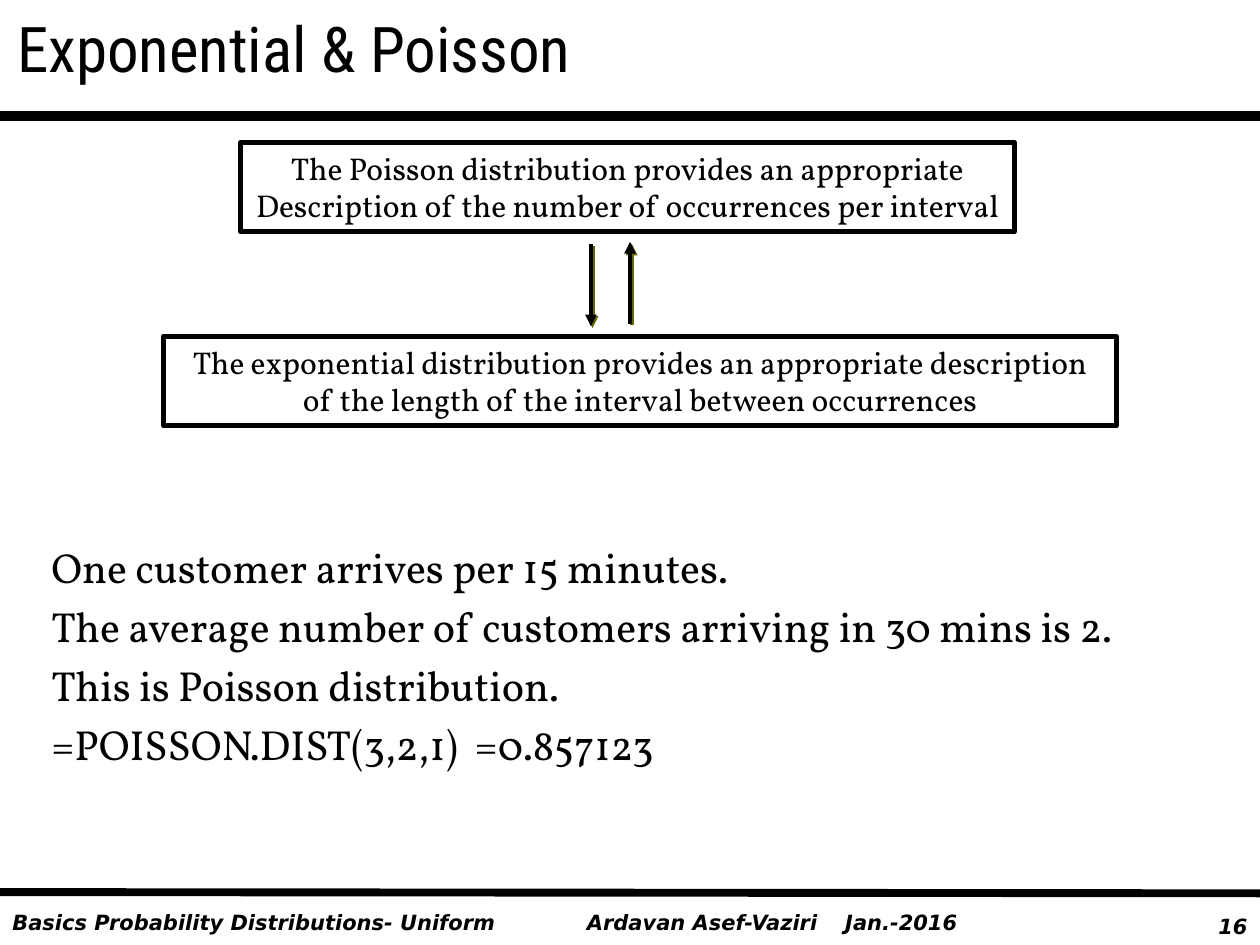
from lxml.etree import SubElement
from pptx import Presentation
from pptx.dml.color import RGBColor
from pptx.enum.shapes import MSO_CONNECTOR, MSO_SHAPE
from pptx.enum.text import MSO_ANCHOR, PP_ALIGN
from pptx.oxml.ns import qn
from pptx.util import Inches, Pt

COLORS = {"ink": "000000", "arrow_shadow": "666600"}
HEADING_FONT, BODY_FONT, FOOTER_FONT = "Roboto Condensed", "Vollkorn", "DejaVu Sans"

TITLE = "Exponential & Poisson"
EXAMPLE = [
    "One customer arrives per 15 minutes.",
    "The average number of customers arriving in 30 mins is 2.",
    "This is Poisson distribution.",
    "=POISSON.DIST(3,2,1)  =0.857123",
]
# Each box: left, top, width, height, paragraphs
DISTRIBUTIONS = [
    (1.91, 1.13, 6.14, 0.71, [
        "The Poisson distribution provides an appropriate",
        "Description of the number of occurrences per interval",
    ]),
    (1.3, 2.67, 7.56, 0.71, [
        "The exponential distribution provides an appropriate description "
        "of the length of the interval between occurrences",
    ]),
]
# Each footer: left, top, width, text, alignment
FOOTERS = [
    (0, 7.17, 4.67, "Basics Probability Distributions- Uniform", PP_ALIGN.LEFT),
    (4.56, 7.17, 3.35, "Ardavan Asef-Vaziri\tJan.-2016", PP_ALIGN.LEFT),
    (9.25, 7.2, 0.75, "16", PP_ALIGN.RIGHT),
]
DATE_TAB = 2.05
# Each rule: start height, end height, line width
RULES = [(0.92, 0.92, 6), (7.08, 7.09, 4.5)]
# Each arrow: x, start height, end height
ARROWS = [(4.69, 1.94, 2.59), (5, 2.57, 1.92)]


def color(name):
    return RGBColor.from_string(COLORS[name])


def write(shape, lines, font, size, align=PP_ALIGN.LEFT, bold_italic=False,
          space_before=0, anchor=MSO_ANCHOR.TOP):
    frame = shape.text_frame
    frame.text = "\n".join(lines)
    frame.word_wrap = True
    frame.vertical_anchor = anchor
    for paragraph in frame.paragraphs:
        paragraph.alignment = align
        paragraph.space_before = Pt(space_before)
        for run in paragraph.runs:
            run.font.name = font
            run.font.size = Pt(size)
            run.font.bold = run.font.italic = bold_italic
            run.font.color.rgb = color("ink")


def add_text(slide, left, top, width, height, lines, font, size, **style):
    box = slide.shapes.add_textbox(*map(Inches, (left, top, width, height)))
    write(box, lines, font, size, **style)
    return box


def add_tab_stop(paragraph, position):
    tabs = SubElement(paragraph._p.get_or_add_pPr(), qn("a:tabLst"))
    SubElement(tabs, qn("a:tab"), pos=str(Inches(position)), algn="l")


def add_line(slide, x1, y1, x2, y2, width):
    """Add a straight line and return it with its empty effect list."""
    line = slide.shapes.add_connector(
        MSO_CONNECTOR.STRAIGHT, *map(Inches, (x1, y1, x2, y2)))
    line.line.color.rgb = color("ink")
    line.line.width = Pt(width)
    effects = SubElement(line._element.spPr, qn("a:effectLst"))
    return line, effects


def add_arrow(slide, x, start, end):
    arrow, effects = add_line(slide, x, start, x, end, 2.25)
    SubElement(arrow.line._get_or_add_ln(), qn("a:tailEnd"), type="triangle")
    shadow = SubElement(effects, qn("a:outerShdw"), dist=str(Pt(1.4)),
                        dir=str(45 * 60000), algn="ctr", rotWithShape="0")
    SubElement(shadow, qn("a:srgbClr"), val=COLORS["arrow_shadow"])


def add_distribution(slide, left, top, width, height, lines):
    box = slide.shapes.add_shape(
        MSO_SHAPE.RECTANGLE, *map(Inches, (left, top, width, height)))
    box.shadow.inherit = False
    box.fill.background()
    box.line.color.rgb = color("ink")
    box.line.width = Pt(3)
    write(box, lines, BODY_FONT, 18, align=PP_ALIGN.CENTER)


def main():
    presentation = Presentation()
    presentation.slide_width, presentation.slide_height = Inches(10), Inches(7.5)
    slide = presentation.slides.add_slide(presentation.slide_layouts[6])

    for left, top, width, text, align in FOOTERS:
        footer = add_text(slide, left, top, width, 0.3, [text], FOOTER_FONT, 12,
                          align=align, bold_italic=True)
        if "\t" in text:
            add_tab_stop(footer.text_frame.paragraphs[0], DATE_TAB)
    for start, end, width in RULES:
        add_line(slide, 0, start, 10, end, width)
    for arrow in ARROWS:
        add_arrow(slide, *arrow)
    add_text(slide, 0.31, 4.25, 9.34, 2.41, EXAMPLE, BODY_FONT, 24, space_before=4.8)
    for distribution in DISTRIBUTIONS:
        add_distribution(slide, *distribution)
    add_text(slide, 0.04, 0, 9.96, 0.75, [TITLE], HEADING_FONT, 36,
             anchor=MSO_ANCHOR.MIDDLE)

    presentation.save("out.pptx")


if __name__ == "__main__":
    main()
